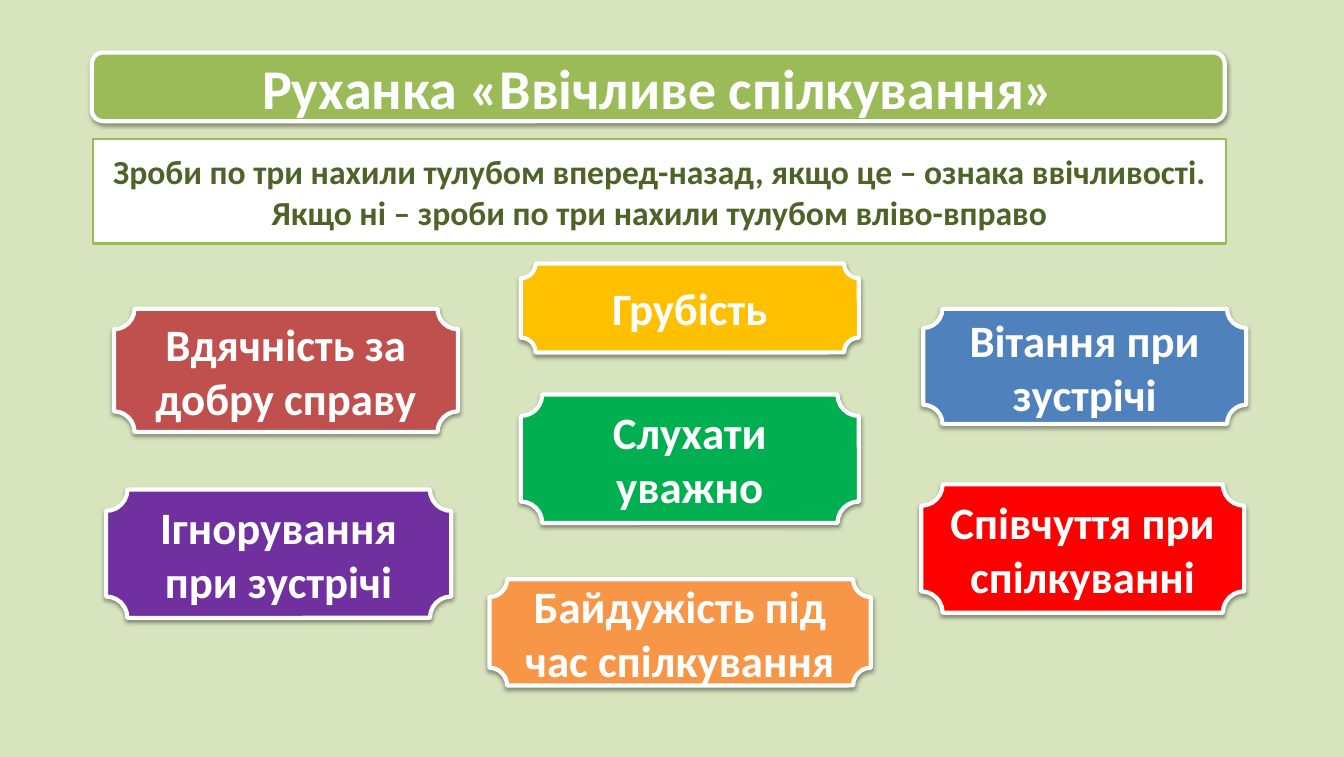
from lxml import etree
from pptx import Presentation
from pptx.dml.color import RGBColor
from pptx.enum.shapes import MSO_SHAPE
from pptx.enum.text import MSO_ANCHOR, PP_ALIGN
from pptx.oxml.ns import qn
from pptx.util import Cm, Pt

RECTANGLE = MSO_SHAPE.RECTANGLE
ROUNDED = MSO_SHAPE.ROUNDED_RECTANGLE
PLAQUE = MSO_SHAPE.PLAQUE
MIDDLE = MSO_ANCHOR.MIDDLE
CENTER = PP_ALIGN.CENTER

TITLE = "Руханка «Ввічливе спілкування»"
TASK = ("Зроби по три нахили тулубом вперед-назад, якщо це – ознака ввічливості. "
        "Якщо ні – зроби по три нахили тулубом вліво-вправо")
PLAQUES = [
    ("Співчуття при спілкуванні", "red", (23.19, 12.19, 8.13, 3.23)),
    ("Вітання при зустрічі", "blue", (23.24, 7.77, 8.13, 2.9)),
    ("Грубість", "yellow", (13.11, 6.63, 8.51, 2.24)),
    ("Слухати уважно", "green", (13.11, 9.93, 8.51, 3.23)),
    ("Ігнорування при зустрічі", "purple", (2.67, 12.32, 8.69, 3.23)),
    ("Вдячність за добру справу", "brick", (2.87, 7.77, 8.66, 3.1)),
    ("Байдужість під час спілкування", "orange", (12.32, 14.58, 9.6, 2.67)),
]

THEME = {
    "font": "Calibri",
    "sizes": {"title": 40, "task": 24, "plaque": 32},
    "colors": {
        "background": "D7E4BD", "white": "FFFFFF", "olive": "9BBB59",
        "dark": "4F6228", "red": "FF0000", "blue": "4F81BD",
        "yellow": "FFC000", "green": "00B050", "purple": "7030A0",
        "brick": "C0504D", "orange": "F79646", "shadow": "000000",
    },
}
SHADOW = {"blurRad": Pt(3.1), "dist": Pt(1.6), "dir": 90 * 60000, "rotWithShape": 0}
SHADOW_ALPHA = 38000


def color(name):
    return RGBColor.from_string(THEME["colors"][name])


def apply(target, values):
    for name, value in values.items():
        setattr(target, name, value)


def add_shadow(box):
    effects = box._element.spPr.find(qn("a:effectLst"))
    shadow = etree.SubElement(effects, qn("a:outerShdw"))
    for name, value in SHADOW.items():
        shadow.set(name, str(value))
    tint = etree.SubElement(shadow, qn("a:srgbClr"), val=THEME["colors"]["shadow"])
    etree.SubElement(tint, qn("a:alpha"), val=str(SHADOW_ALPHA))


def add_box(page, kind, place, text, role, fill,
            line="white", line_width=3, ink="white", raised=True):
    box = page.shapes.add_shape(kind, *map(Cm, place))
    box.shadow.inherit = False
    box.fill.solid()
    box.fill.fore_color.rgb = color(fill)
    box.line.color.rgb = color(line)
    box.line.width = Pt(line_width)
    if raised:
        add_shadow(box)
    apply(box.text_frame, {"word_wrap": True, "vertical_anchor": MIDDLE})
    para = box.text_frame.paragraphs[0]
    para.alignment = CENTER
    span = para.add_run()
    span.text = text
    apply(span.font, {"name": THEME["font"], "size": Pt(THEME["sizes"][role]), "bold": True})
    span.font.color.rgb = color(ink)


def main():
    deck = Presentation()
    apply(deck, {"slide_width": Cm(33.83), "slide_height": Cm(19.05)})
    page = deck.slides.add_slide(deck.slide_layouts[6])
    page.background.fill.solid()
    page.background.fill.fore_color.rgb = color("background")

    add_box(page, RECTANGLE, (2.34, 3.5, 28.52, 2.64), TASK, "task", "white",
            line="olive", line_width=2, ink="dark", raised=False)
    add_box(page, ROUNDED, (2.31, 1.32, 28.52, 1.73), TITLE, "title", "olive")
    for text, fill, place in PLAQUES:
        add_box(page, PLAQUE, place, text, "plaque", fill)

    deck.save("out.pptx")


if __name__ == "__main__":
    main()
